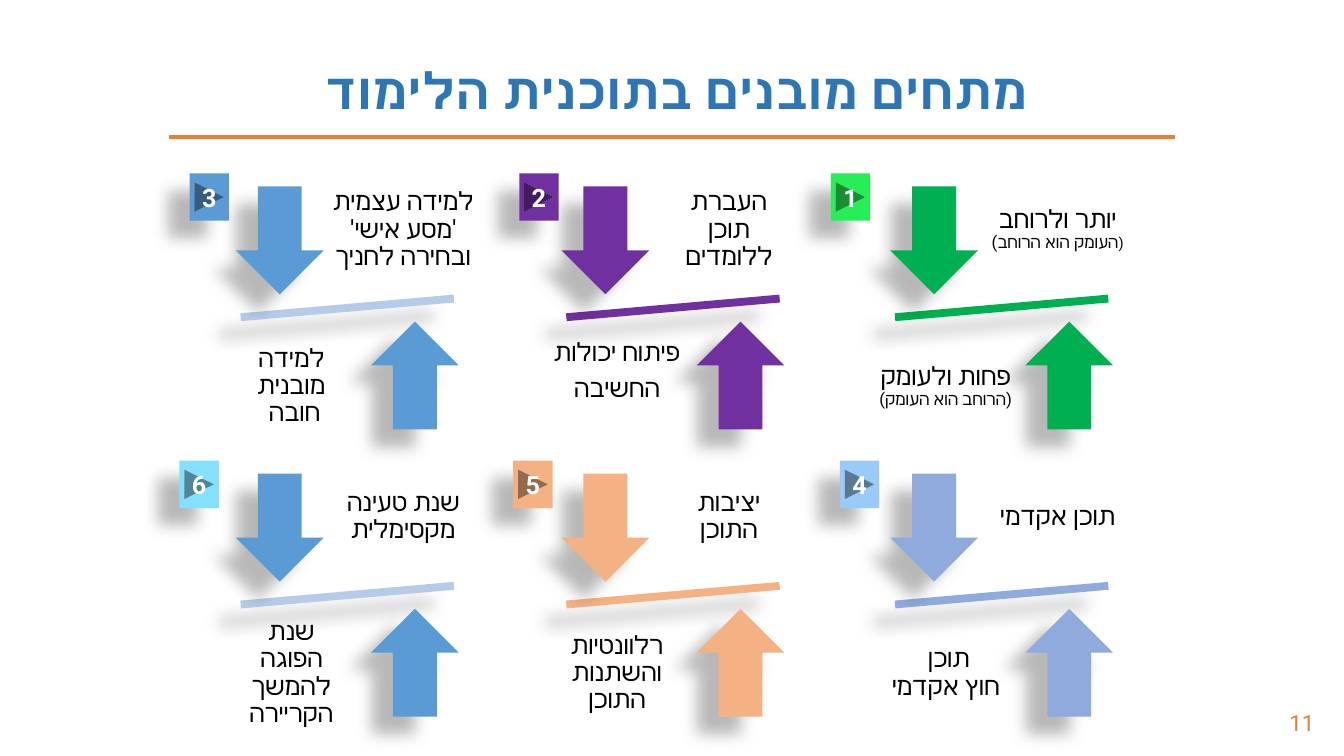
"""Build a slide of six numbered tensions, each a tilted bar between two arrows."""
from collections import namedtuple

from lxml import etree
from pptx import Presentation
from pptx import util as u
from pptx.dml.color import RGBColor
from pptx.enum import shapes, text
from pptx.oxml.ns import qn

COLOURS = {
    "title": "2E75B6", "accent": "ED7D31", "black": "000000", "white": "FFFFFF",
    "green": "00B050", "lime": "27ED56", "purple": "7030A0", "blue": "5B9BD5",
    "pale": "B5CBE7", "periwinkle": "8FAADC", "sky": "9ACBF8",
    "peach": "F4B183", "cyan": "85DFFF",
}
FONT = "Roboto"
COLUMNS = (2.0, 5.23, 8.49)
ROWS = (1.72, 4.57)
ARROW_SIZE = (0.87, 1.07)
BADGE_SIZE = (0.39, 0.47)
CAPTION_HEIGHT = 1.12
UPPER_CENTRE, LOWER_CENTRE, LOWER_DROP = 2.0, 0.89, 1.55
SHAPE = shapes.MSO_SHAPE
ALIGN = text.PP_ALIGN

Caption = namedtuple("Caption", "width paragraphs lift", defaults=(0,))
Panel = namedtuple("Panel", "number column row arrow bar badge badge_shift upper lower")

PANELS = (
    Panel("1", 2, 0, "green", "green", "lime", -0.25,
          Caption(1.65, [[("יותר ולרוחב ", 18), ("(", 10.5), ("העומק הוא הרוחב)", 12)]]),
          Caption(1.8, [[("פחות ולעומק ", 18), ("(הרוחב הוא העומק)", 12)]])),
    Panel("2", 1, 0, "purple", "purple", "purple", -0.08,
          Caption(1.5, [[("העברת תוכן ללומדים", 18)]]),
          Caption(2.13, [[("פיתוח יכולות", 18)], [("החשיבה", 18)]], 0.15)),
    Panel("3", 0, 0, "blue", "pale", "blue", -0.12,
          Caption(1.92, [[("למידה עצמית 'מסע אישי' ובחירה לחניך", 18)]]),
          Caption(1.42, [[("למידה מובנית חובה ", 18)]])),
    Panel("4", 2, 1, "periwinkle", "periwinkle", "sky", -0.16,
          Caption(1.5, [[("תוכן אקדמי", 18)]]),
          Caption(2.09, [[("תוכן \vחוץ אקדמי", 18)]])),
    Panel("5", 1, 1, "peach", "peach", "peach", -0.14,
          Caption(0.93, [[("יציבות התוכן", 18)]]),
          Caption(1.3, [[("רלוונטיות והשתנות התוכן", 18)]])),
    Panel("6", 0, 1, "blue", "pale", "cyan", -0.22,
          Caption(1.67, [[("שנת טעינה מקסימלית", 18)]]),
          Caption(1.42, [[("שנת הפוגה להמשך הקריירה", 18)]])),
)


def inches(*lengths):
    """Convert lengths in inches to slide units."""
    return [u.Inches(length) for length in lengths]


def add_shadow(shape):
    """Give a shape a soft shadow to its lower left."""
    effects = etree.SubElement(shape.element.spPr, qn("a:effectLst"))
    shadow = etree.SubElement(
        effects, qn("a:outerShdw"), blurRad=str(u.Pt(11.8)), dist=str(u.Pt(19.7)),
        dir=str(141 * 60000), algn="t", rotWithShape="0")
    colour = etree.SubElement(shadow, qn("a:srgbClr"), val=COLOURS["black"])
    etree.SubElement(colour, qn("a:alpha"), val="28000")


def add_solid(parent, kind, box, colour, shadowed=True):
    """Add a filled preset shape without an outline."""
    shape = parent.shapes.add_shape(kind, *inches(*box))
    shape.fill.solid()
    shape.fill.fore_color.rgb = RGBColor.from_string(COLOURS[colour])
    shape.line.fill.background()
    if shadowed:
        add_shadow(shape)
    else:
        shape.shadow.inherit = False
    return shape


def format_run(run, size, colour, bold):
    """Set a run's font for Latin and Hebrew letters alike."""
    run.font.size = u.Pt(size)
    run.font.bold = bold
    run.font.color.rgb = RGBColor.from_string(COLOURS[colour])
    run.font.name = FONT
    etree.SubElement(run.font._element, qn("a:cs"), typeface=FONT)


def write(shape, paragraphs, colour, bold=False, align=ALIGN.CENTER, spacing=None, after=None):
    """Fill a shape with right-to-left paragraphs of (words, size) pieces."""
    frame = shape.text_frame
    frame.word_wrap = True
    frame.vertical_anchor = text.MSO_ANCHOR.MIDDLE
    for index, pieces in enumerate(paragraphs):
        paragraph = frame.add_paragraph() if index else frame.paragraphs[0]
        paragraph.alignment = align
        paragraph.line_spacing = spacing
        paragraph.space_after = after
        paragraph._p.get_or_add_pPr().set("rtl", "1")
        for words, size in pieces:
            for position, line in enumerate(words.split("\v")):
                if position:
                    paragraph.add_line_break()
                run = paragraph.add_run()
                run.text = line
                format_run(run, size, colour, bold)


def add_caption(parent, caption, centre, top):
    """Add a caption centred on a given horizontal position."""
    box = (centre - caption.width / 2, top - caption.lift, caption.width, CAPTION_HEIGHT)
    shape = parent.shapes.add_textbox(*inches(*box))
    frame = shape.text_frame
    frame.margin_left = frame.margin_right = u.Inches(0.14)
    frame.margin_top = frame.margin_bottom = u.Inches(0.14)
    write(shape, caption.paragraphs, "black", spacing=0.9, after=u.Pt(6.3))


def add_panel(slide, panel):
    """Add one tension: bar, two arrows, two captions and a numbered badge."""
    left, top = COLUMNS[panel.column], ROWS[panel.row]
    group = slide.shapes.add_group_shape()
    bar = add_solid(group, SHAPE.MATH_MINUS, (left, top + 1.17, 2.89, 0.33), panel.bar)
    bar.rotation = 355
    add_solid(group, SHAPE.DOWN_ARROW, (left + 0.34, top + 0.13, *ARROW_SIZE), panel.arrow)
    add_caption(group, panel.upper, left + UPPER_CENTRE, top)
    add_solid(group, SHAPE.UP_ARROW, (left + 1.68, top + 1.47, *ARROW_SIZE), panel.arrow)
    add_caption(group, panel.lower, left + LOWER_CENTRE, top + LOWER_DROP)
    badge = add_solid(group, SHAPE.ACTION_BUTTON_FORWARD_OR_NEXT,
                      (left + panel.badge_shift, top, *BADGE_SIZE), panel.badge)
    write(badge, [[(panel.number, 18)]], "white", bold=True)


def main():
    """Build and save the slide."""
    presentation = Presentation()
    presentation.slide_width, presentation.slide_height = inches(13.33, 7.5)
    slide = presentation.slides.add_slide(presentation.slide_layouts[6])
    add_solid(slide, SHAPE.MATH_MINUS, (-0.13, 1.26, 13.59, 0.2), "accent", shadowed=False)
    page_number = slide.shapes.add_textbox(*inches(12.6, 6.98, 0.59, 0.37))
    write(page_number, [[(" 11", 16)]], "accent", align=ALIGN.RIGHT)
    title = slide.shapes.add_textbox(*inches(0.96, 0.2, 11.5, 1.45))
    write(title, [[("מתחים מובנים בתוכנית הלימוד", 36)]], "title", bold=True, spacing=0.9)
    for panel in PANELS:
        add_panel(slide, panel)
    presentation.save("out.pptx")


if __name__ == "__main__":
    main()
